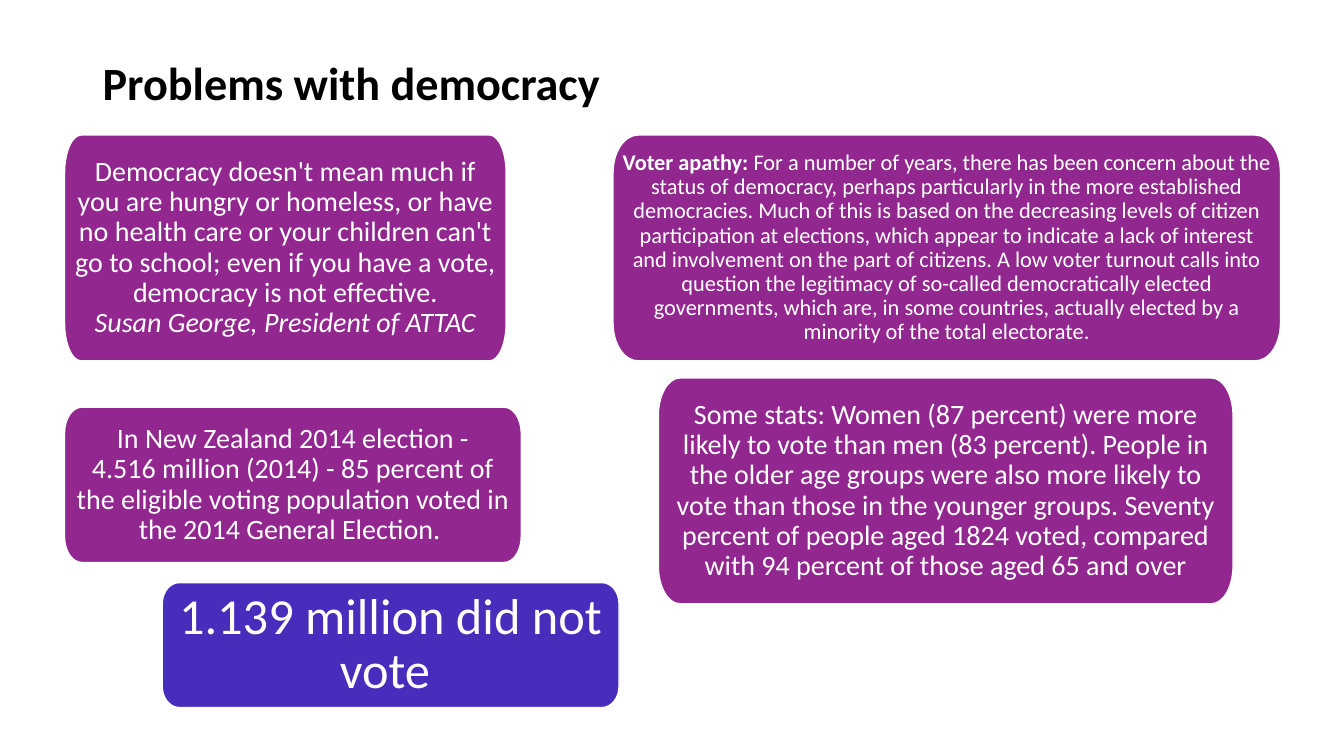
import lxml.etree
import pptx
import pptx.dml.color
import pptx.enum.text
import pptx.oxml.ns
import pptx.util

Inches = pptx.util.Inches
Pt = pptx.util.Pt
RGBColor = pptx.dml.color.RGBColor
Align = pptx.enum.text.PP_ALIGN
Anchor = pptx.enum.text.MSO_ANCHOR
qn = pptx.oxml.ns.qn

BLACK = RGBColor(0x00, 0x00, 0x00)
WHITE = RGBColor(0xFF, 0xFF, 0xFF)
PURPLE = RGBColor(0x92, 0x27, 0x8F)
INDIGO = RGBColor(0x48, 0x2C, 0xBC)

FONT = "Calibri"
LINE_SPACING = 0.9
CORNER_WIDTH = 0.0375   # share of the card's width
CORNER_HEIGHT = 1 / 6   # share of the card's height
CURVE = 0.55            # pull of a curve's handles towards the corner
HARD_SPACE = chr(160)   # keeps a number and its unit on one line

# left, top, width, height, fill, text size, runs as (text, style)
CARDS = [
    (0.64, 1.34, 4.38, 2.24, PURPLE, 20, [
        ("Democracy doesn't mean much if you are hungry or homeless, or have no "
         "health care or your children can't go to school; even if you have a "
         "vote, democracy is not effective.", ""),
        ("\n", ""),
        ("Susan George, President of ATTAC", "italic"),
    ]),
    (6.08, 1.34, 6.62, 2.24, PURPLE, 16, [
        ("Voter apathy: ", "bold"),
        ("For a number of years, there has been concern about the status of "
         "democracy, perhaps particularly in the more established democracies. "
         "Much of this is based on the decreasing levels of citizen participation "
         "at elections, which appear to indicate a lack of interest and "
         "involvement on the part of citizens. A low voter turnout calls into "
         "question the legitimacy of so-called democratically elected governments, "
         "which are, in some countries, actually elected by a minority of the "
         "total electorate.", ""),
    ]),
    (0.64, 4.04, 4.53, 1.54, PURPLE, 20, [
        ("In New Zealand 2014 election - 4.516" + HARD_SPACE + "million (2014) - "
         "85 percent of the eligible voting population voted in the 2014 General "
         "Election. ", ""),
    ]),
    (6.53, 3.75, 5.7, 2.24, PURPLE, 20, [
        ("Some stats: Women (87 percent) were more likely to vote than men "
         "(83 percent). People in the older age groups were also more likely to "
         "vote than those in the younger groups. Seventy percent of people aged "
         "1824 voted, compared with 94 percent of those aged 65 and over", ""),
    ]),
    (1.61, 5.78, 4.53, 1.24, INDIGO, 36, [
        ("1.139 million did not vote ", ""),
    ]),
]


def add_runs(para, runs, size, color):
    """Fill a paragraph run by run; a run of "\\n" is a line break."""
    para.line_spacing = LINE_SPACING
    for text, style in runs:
        if text == "\n":
            para.add_line_break()
            continue
        span = para.add_run()
        span.text = text
        span.font.name = FONT
        span.font.size = Pt(size)
        span.font.color.rgb = color
        span.font.bold = style == "bold"
        span.font.italic = style == "italic"


def add_title(page, text):
    box = page.shapes.add_textbox(Inches(0.92), Inches(0.4), Inches(11.5), Inches(1.45))
    frame = box.text_frame
    frame.word_wrap = True
    frame.vertical_anchor = Anchor.TOP
    frame.margin_top = Inches(0.2)
    add_runs(frame.paragraphs[0], [(text, "bold")], 33, BLACK)


def round_corners(card, points, corners):
    """Turn every other segment of the outline into a curve bent to its corner."""
    segments = list(card._element.iter(qn("a:lnTo")))[::2]
    for index, (segment, corner) in enumerate(zip(segments, corners)):
        start, end = points[2 * index], points[2 * index + 1]
        handles = [[a + CURVE * (b - a) for a, b in zip(point, corner)]
                   for point in (start, end)]
        curve = lxml.etree.Element(qn("a:cubicBezTo"))
        for x, y in (*handles, end):
            lxml.etree.SubElement(curve, qn("a:pt"),
                                  x=str(int(x - card.left)), y=str(int(y - card.top)))
        segment.getparent().replace(segment, curve)


def add_outline(page, left, top, width, height):
    """Draw a rectangle with elliptical corners, clockwise from its left side."""
    right, bottom = left + width, top + height
    radius_x, radius_y = width * CORNER_WIDTH, height * CORNER_HEIGHT
    near_x, far_x = left + radius_x, right - radius_x
    near_y, far_y = top + radius_y, bottom - radius_y
    points = [(left, near_y), (near_x, top), (far_x, top), (right, near_y),
              (right, far_y), (far_x, bottom), (near_x, bottom), (left, far_y)]
    corners = [(left, top), (right, top), (right, bottom), (left, bottom)]
    points, corners = ([(Inches(x), Inches(y)) for x, y in group]
                       for group in (points, corners))
    builder = page.shapes.build_freeform(*points[0])
    builder.add_line_segments(points[1:], close=True)
    card = builder.convert_to_shape()
    round_corners(card, points, corners)
    return card


def add_card(page, left, top, width, height, fill, size, runs):
    card = add_outline(page, left, top, width, height)
    card.shadow.inherit = False
    card.fill.solid()
    card.fill.fore_color.rgb = fill
    card.line.color.rgb = WHITE
    card.line.width = Pt(1)
    frame = card.text_frame
    frame.word_wrap = True
    frame.vertical_anchor = Anchor.MIDDLE
    frame.margin_left = frame.margin_right = Inches(0.08)
    frame.margin_top = frame.margin_bottom = Inches(0.06)
    para = frame.paragraphs[0]
    para.alignment = Align.CENTER
    add_runs(para, runs, size, WHITE)


def main():
    deck = pptx.Presentation()
    deck.slide_width = Inches(13.33)
    deck.slide_height = Inches(7.5)
    page = deck.slides.add_slide(deck.slide_layouts[6])
    add_title(page, "Problems with democracy")
    for card in CARDS:
        add_card(page, *card)
    deck.save("out.pptx")


if __name__ == "__main__":
    main()
